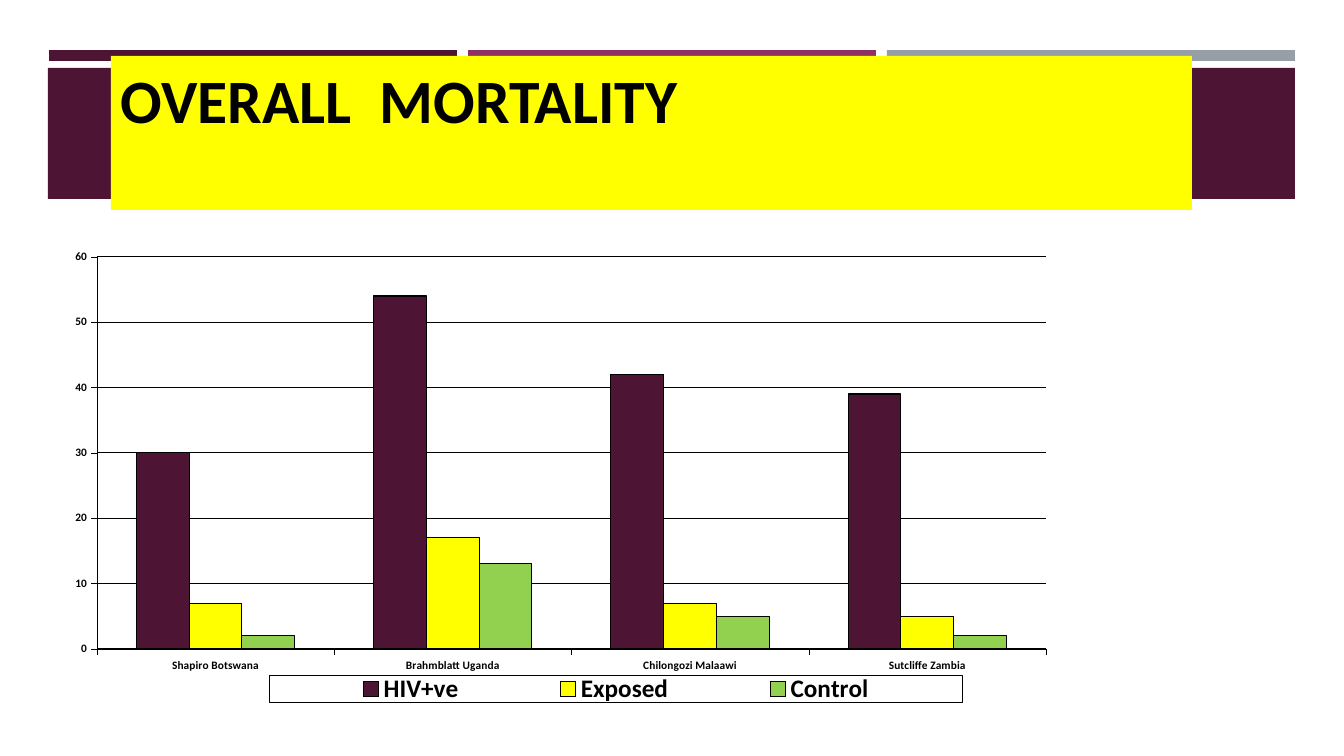
"""Builds the overall mortality slide: banner, title and clustered column chart."""
from pptx import Presentation
from pptx.chart.data import CategoryChartData
from pptx.dml.color import RGBColor
from pptx.enum.chart import XL_CHART_TYPE, XL_LEGEND_POSITION, XL_TICK_LABEL_POSITION, XL_TICK_MARK
from pptx.enum.shapes import MSO_SHAPE
from pptx.enum.text import MSO_ANCHOR, PP_ALIGN
from pptx.oxml import parse_xml
from pptx.oxml.ns import nsdecls
from pptx.util import Pt

EMU_PER_PX = 914400 / 100.8
SLIDE = (1344, 756)
FONT = "Calibri"
COLORS = {"plum": "4D1434", "magenta": "903163", "grey": "969FA7",
          "yellow": "FFFF00", "green": "92D050", "black": "000000"}

TITLE = "OVERALL  MORTALITY"
STRIPES = ["plum", "magenta", "grey"]
STRIPE_BOX, STRIPE_STEP = (49, 50, 408, 11), 419
BANNER_BOX = (48, 68, 1247, 131)
TITLE_BOX = (111, 56, 1081, 154)
CHART_BOX = (60, 247, 998, 468)
PLOT_BOX = (97, 257, 949, 392)
LEGEND_BOX = (270, 674, 693, 27)

STUDIES = ["Shapiro Botswana", "Brahmblatt Uganda", "Chilongozi Malaawi", "Sutcliffe Zambia"]
MORTALITY = [("HIV+ve", "plum", (30, 54, 42, 39)),
             ("Exposed", "yellow", (7, 17, 7, 5)),
             ("Control", "green", (2, 13, 5, 2))]


def px(*lengths):
    return [round(length * EMU_PER_PX) for length in lengths]


def rgb(color):
    return RGBColor.from_string(COLORS[color])


def add_block(slide, box, color):
    block = slide.shapes.add_shape(MSO_SHAPE.RECTANGLE, *px(*box))
    block.shadow.inherit = False
    block.fill.solid()
    block.fill.fore_color.rgb = rgb(color)
    block.line.fill.background()
    return block


def style_font(font, size):
    font.name, font.size, font.bold = FONT, Pt(size), True
    font.color.rgb = rgb("black")


def style_line(line, width):
    line.color.rgb = rgb("black")
    line.width = Pt(width)


def chart_layout(box, target=""):
    left, top, width, height = CHART_BOX
    shares = {"x": (box[0] - left) / width, "y": (box[1] - top) / height,
              "w": box[2] / width, "h": box[3] / height}
    modes = '<c:xMode val="edge"/><c:yMode val="edge"/>'
    places = "".join(f'<c:{key} val="{share:.3f}"/>' for key, share in shares.items())
    return parse_xml(f'<c:layout {nsdecls("c")}><c:manualLayout>{target}{modes}{places}'
                     '</c:manualLayout></c:layout>')


def add_title(slide):
    frame = add_block(slide, TITLE_BOX, "yellow").text_frame
    frame.word_wrap = True
    frame.vertical_anchor = MSO_ANCHOR.BOTTOM
    frame.margin_bottom, = px(73)
    heading = frame.paragraphs[0]
    heading.text = TITLE
    heading.alignment = PP_ALIGN.LEFT
    heading.line_spacing = 0.9
    style_font(heading.font, 44)


def add_mortality_chart(slide):
    data = CategoryChartData()
    data.categories = STUDIES
    for group, _, rates in MORTALITY:
        data.add_series(group, rates)
    chart = slide.shapes.add_chart(XL_CHART_TYPE.COLUMN_CLUSTERED, *px(*CHART_BOX), data).chart
    chart.has_title = False
    style_font(chart.font, 8.1)

    columns = chart.plots[0]
    columns.gap_width, columns.overlap, columns.vary_by_categories = 150, 0, False
    for series, (_, color, _) in zip(columns.series, MORTALITY):
        series.format.fill.solid()
        series.format.fill.fore_color.rgb = rgb(color)
        style_line(series.format.line, 0.81)

    for axis in (chart.category_axis, chart.value_axis):
        axis.major_tick_mark = XL_TICK_MARK.OUTSIDE
        axis.minor_tick_mark = XL_TICK_MARK.NONE
        style_font(axis.tick_labels.font, 8.1)
        style_line(axis.format.line, 0.2)
    chart.category_axis.tick_label_position = XL_TICK_LABEL_POSITION.LOW
    rates_axis = chart.value_axis
    rates_axis.minimum_scale, rates_axis.maximum_scale, rates_axis.major_unit = 0, 60, 10
    rates_axis.has_major_gridlines = True
    style_line(rates_axis.major_gridlines.format.line, 0.81)

    chart.has_legend = True
    chart.legend.position = XL_LEGEND_POSITION.BOTTOM
    chart.legend.include_in_layout = False
    style_font(chart.legend.font, 18)
    place_parts(chart._chartSpace)


def place_parts(chart_space):
    for automatic in chart_space.xpath("c:chart/c:plotArea/c:layout | c:chart/c:legend/c:layout"):
        automatic.getparent().remove(automatic)
    plot_area = chart_space.xpath("c:chart/c:plotArea")[0]
    plot_area.insert(0, chart_layout(PLOT_BOX, '<c:layoutTarget val="inner"/>'))
    overlay = chart_space.xpath("c:chart/c:legend/c:overlay")[0]
    overlay.addprevious(chart_layout(LEGEND_BOX))
    overlay.addnext(parse_xml(
        f'<c:spPr {nsdecls("c", "a")}><a:noFill/><a:ln w="{Pt(0.2)}"><a:solidFill>'
        f'<a:srgbClr val="{COLORS["black"]}"/></a:solidFill></a:ln></c:spPr>'))


def main():
    deck = Presentation()
    deck.slide_width, deck.slide_height = px(*SLIDE)
    slide = deck.slides.add_slide(deck.slide_layouts[6])
    left, *stripe_rest = STRIPE_BOX
    for index, color in enumerate(STRIPES):
        add_block(slide, (left + index * STRIPE_STEP, *stripe_rest), color)
    add_block(slide, BANNER_BOX, "plum")
    add_title(slide)
    add_mortality_chart(slide)
    deck.save("out.pptx")


if __name__ == "__main__":
    main()
